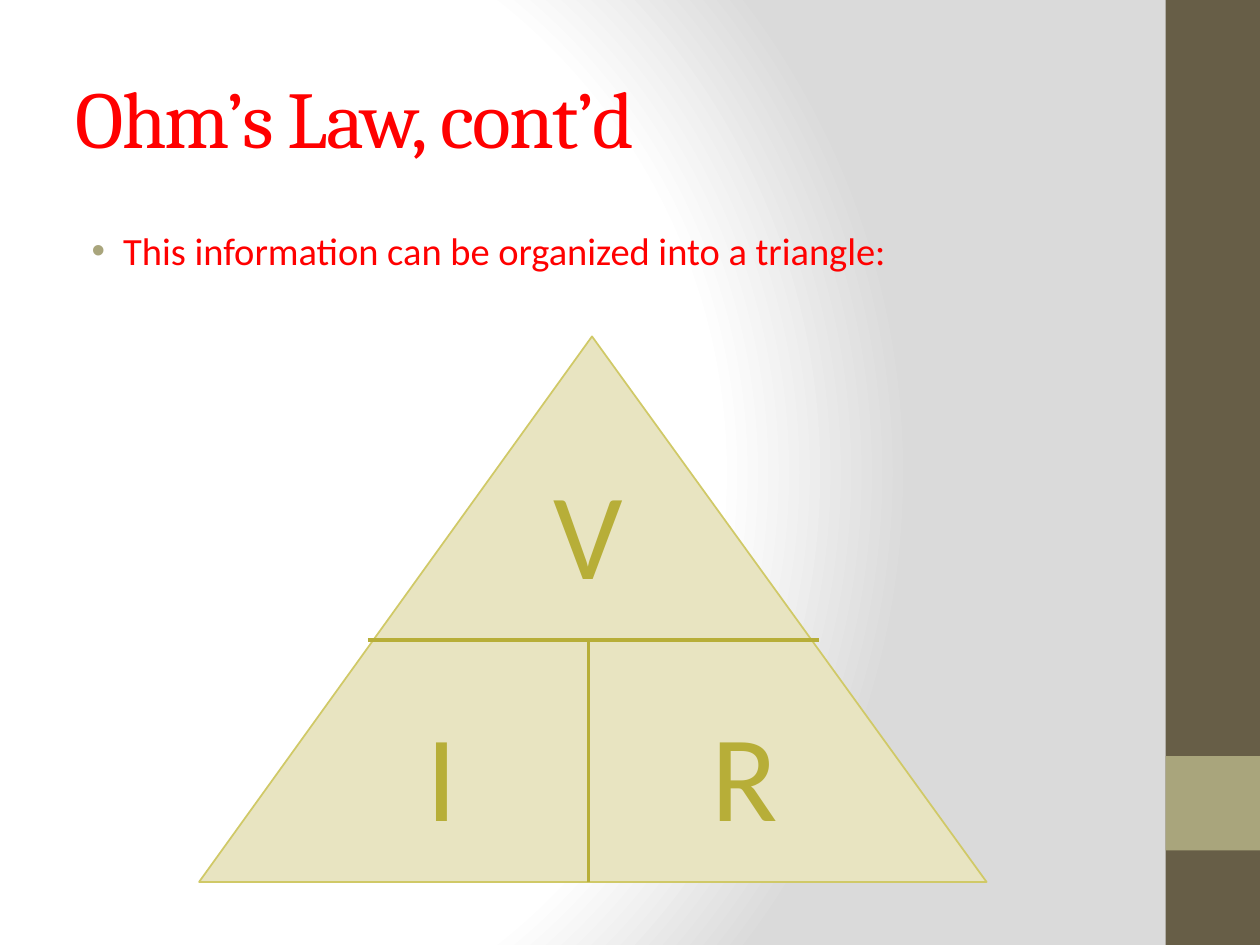
from dataclasses import dataclass

from pptx import Presentation
from pptx.dml.color import RGBColor as Rgb
from pptx.enum.shapes import MSO_CONNECTOR as Conn, MSO_SHAPE as Kind
from pptx.enum.text import MSO_ANCHOR as Anchor, MSO_AUTO_SIZE as Fit, PP_ALIGN as Align
from pptx.oxml import parse_xml
from pptx.oxml.ns import nsdecls, qn
from pptx.util import Inches, Pt


@dataclass(frozen=True)
class Theme:
    head: str = "Cambria"
    body: str = "Calibri"
    red: str = "FF0000"
    dark: str = "675E47"
    sage: str = "A9A57C"
    pale: str = "E8E4C1"
    edge: str = "D0C967"
    olive: str = "B7AE38"
    stops: tuple = ((0, "FFFFFF"), (75, "FFFFFF"), (100, "DADADA"))
    title: int = 46
    text: int = 22
    label: int = 70


class Deck:
    def __init__(self, theme):
        self.theme = theme
        self.file = Presentation()
        self.file.slide_width = Inches(10)
        self.file.slide_height = Inches(7.5)
        self.slide = self.file.slides.add_slide(self.file.slide_layouts[5])
        self.shapes = self.slide.shapes

    def backdrop(self):
        self.slide.background.fill.solid()
        solid = next(self.slide.element.iter(qn("a:solidFill")))
        stops = "".join(
            f'<a:gs pos="{pos * 1000}"><a:srgbClr val="{color}"/></a:gs>'
            for pos, color in self.theme.stops
        )
        grad = parse_xml(
            f'<a:gradFill {nsdecls("a")} rotWithShape="1"><a:gsLst>{stops}</a:gsLst>'
            '<a:path path="circle"><a:fillToRect l="20000" t="50000" r="100000" b="50000"/>'
            "</a:path></a:gradFill>"
        )
        solid.getparent().replace(solid, grad)

    def run(self, para, text, font, size, color):
        run = para.add_run()
        run.text = text
        run.font.name = font
        run.font.size = Pt(size)
        run.font.color.rgb = Rgb.from_string(color)
        return run

    def title(self, text, x, y, w, h):
        box = self.shapes.title
        box.left, box.top, box.width, box.height = map(Inches, (x, y, w, h))
        frame = box.text_frame
        frame.word_wrap = True
        frame.auto_size = Fit.NONE
        frame.vertical_anchor = Anchor.MIDDLE
        para = frame.paragraphs[0]
        para.alignment = Align.LEFT
        run = self.run(para, text, self.theme.head, self.theme.title, self.theme.red)
        run.font._element.set("spc", "-100")

    def text(self, x, y, w, h, fit=Fit.NONE):
        frame = self.shapes.add_textbox(*map(Inches, (x, y, w, h))).text_frame
        frame.word_wrap = True
        frame.auto_size = fit
        return frame.paragraphs[0]

    def bullet(self, text, x, y, w, h):
        para = self.text(x, y, w, h)
        props = para._p.get_or_add_pPr()
        props.set("marL", str(Inches(0.38)))
        props.set("indent", str(Inches(-0.25)))
        for part in (
            '<a:spcBef {}><a:spcPct val="20000"/></a:spcBef>',
            f'<a:buClr {{}}><a:srgbClr val="{self.theme.sage}"/></a:buClr>',
            '<a:buFont {} typeface="Arial"/>',
            '<a:buChar {} char="•"/>',
        ):
            props.append(parse_xml(part.format(nsdecls("a"))))
        self.run(para, text, self.theme.body, self.theme.text, self.theme.red)

    def label(self, text, x, y):
        para = self.text(x, y, 1.67, 1.28, Fit.SHAPE_TO_FIT_TEXT)
        para.alignment = Align.CENTER
        self.run(para, text, self.theme.body, self.theme.label, self.theme.olive)

    def shape(self, kind, x, y, w, h, fill, edge=None):
        item = self.shapes.add_shape(kind, *map(Inches, (x, y, w, h)))
        item.shadow.inherit = False
        item.fill.solid()
        item.fill.fore_color.rgb = Rgb.from_string(fill)
        if edge:
            item.line.color.rgb = Rgb.from_string(edge)
            item.line.width = Pt(1)
        else:
            item.line.fill.background()
        return item

    def line(self, *ends):
        item = self.shapes.add_connector(Conn.STRAIGHT, *map(Inches, ends))
        item.line.color.rgb = Rgb.from_string(self.theme.olive)
        item.line.width = Pt(2)
        item._element.spPr.append(parse_xml(f'<a:effectLst {nsdecls("a")}/>'))


def main():
    theme = Theme()
    deck = Deck(theme)
    deck.backdrop()
    deck.shape(Kind.RECTANGLE, 9.25, 0, 0.75, 7.5, theme.dark)
    deck.shape(Kind.RECTANGLE, 9.25, 6, 0.75, 0.75, theme.sage)
    deck.title("Ohm’s Law, cont’d", 0.5, 0.3, 8.33, 1.25)
    deck.bullet("This information can be organized into a triangle:", 0.5, 1.75, 8.33, 5.25)

    base, split, mid = 7, 5.08, 4.67
    top = 2.67
    tri = deck.shape(
        Kind.ISOSCELES_TRIANGLE, 1.58, top, 6.25, base - top, theme.pale, theme.edge
    )
    tri.adjustments[0] = 0.499
    deck.line(2.92, split, 6.5, split)
    deck.line(mid, base, mid, split)
    for text, x, y in (("V", 3.83, 3.58), ("R", 5.08, 5.5), ("I", 2.67, 5.5)):
        deck.label(text, x, y)
    deck.file.save("out.pptx")


if __name__ == "__main__":
    main()
